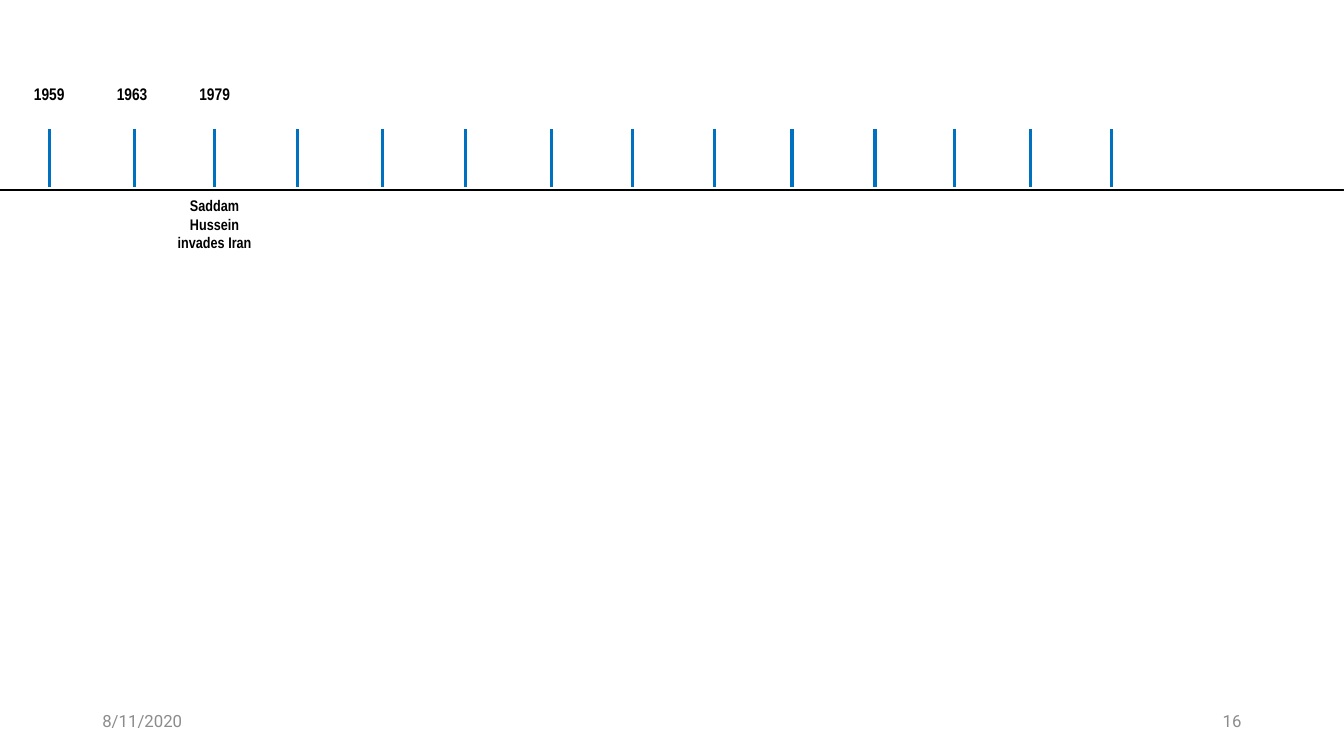
from pptx import Presentation
from pptx.dml.color import RGBColor
from pptx.enum import shapes, text
from pptx.oxml.ns import qn
from pptx.util import Cm, Pt

BLACK = RGBColor(0x00, 0x00, 0x00)
BLUE = RGBColor(0x00, 0x70, 0xC0)
GREY = RGBColor(0x8C, 0x8C, 0x8C)

SLIDE_W, SLIDE_H = 33.87, 19.05
TICKS = [1.24, 3.4, 5.41, 7.49, 9.63, 11.73, 13.89,
         15.93, 18.01, 19.96, 22.05, 24.05, 25.98, 28.02]
# label centre, year, event
EVENTS = [(1.24, "1959", ""),
          (3.33, "1963", ""),
          (5.41, "1979", "Saddam Hussein invades Iran")]
LABEL_W = 2.49


def add_text(slide, box, words, size, font, color, align,
             bold=False, anchor=text.MSO_ANCHOR.TOP):
    """Add one paragraph of text in box (left, top, width, height in cm)."""
    tf = slide.shapes.add_textbox(*map(Cm, box)).text_frame
    tf.word_wrap = True
    tf.vertical_anchor = anchor
    p = tf.paragraphs[0]
    p.text = words
    p.alignment = align
    r = p.runs[0]
    r.font.size = Pt(size)
    r.font.name = font
    r.font.bold = bold
    r.font.color.rgb = color


def add_tick(slide, x, top, bottom):
    tick = slide.shapes.add_connector(
        shapes.MSO_CONNECTOR.STRAIGHT, Cm(x), Cm(top), Cm(x), Cm(bottom))
    tick.line.color.rgb = BLUE
    tick.line.width = Pt(2.25)
    sp_pr = tick._element.spPr
    sp_pr.append(sp_pr.makeelement(qn("a:effectLst"), {}))


def add_timeline(slide, left, top, width):
    """Place year labels, ticks, axis and event notes from top downwards."""
    axis_top = top + 2.8
    axis = slide.shapes.add_shape(
        shapes.MSO_SHAPE.RECTANGLE, Cm(left), Cm(axis_top), Cm(width), Cm(0.02))
    axis.shadow.inherit = False
    axis.fill.solid()
    axis.fill.fore_color.rgb = BLACK
    axis.line.color.rgb = BLACK
    axis.line.width = Pt(0.75)

    for x in TICKS:
        add_tick(slide, left + x, top + 1.27, axis_top - 0.06)

    for center, year, event in EVENTS:
        label_left = left + center - LABEL_W / 2
        for words, y, height, size in ((year, top, 0.76, 12),
                                       (event, axis_top + 0.05, 1.68, 11)):
            if words:
                add_text(slide, (label_left, y, LABEL_W, height), words, size,
                         "Arial Narrow", BLACK, text.PP_ALIGN.CENTER, bold=True)


def add_footer(slide, left, top, width, height):
    """Put the date at the left end and the slide number at the right end."""
    part_w = 7.62
    for x, words, align in (
            (left, "8/11/2020", text.PP_ALIGN.LEFT),
            (left + width - part_w, "16", text.PP_ALIGN.RIGHT)):
        add_text(slide, (x, top, part_w, height), words, 12, "Roboto", GREY,
                 align, anchor=text.MSO_ANCHOR.MIDDLE)


def main():
    prs = Presentation()
    prs.slide_width, prs.slide_height = Cm(SLIDE_W), Cm(SLIDE_H)
    slide = prs.slides.add_slide(prs.slide_layouts[6])
    add_timeline(slide, 0, 1.98, SLIDE_W)
    add_footer(slide, 2.33, 17.65, 29.21, 1.02)
    prs.save("out.pptx")


if __name__ == "__main__":
    main()
